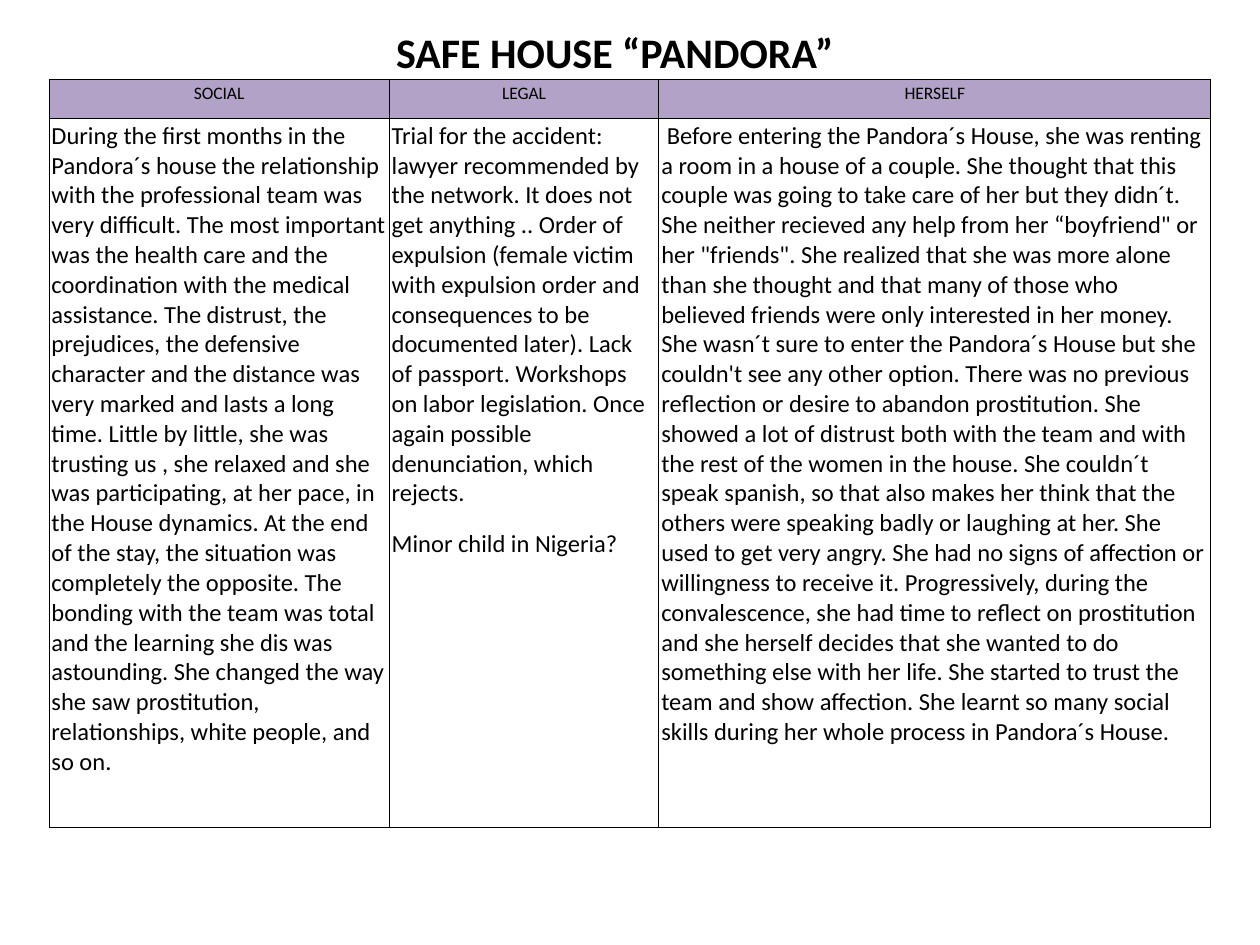
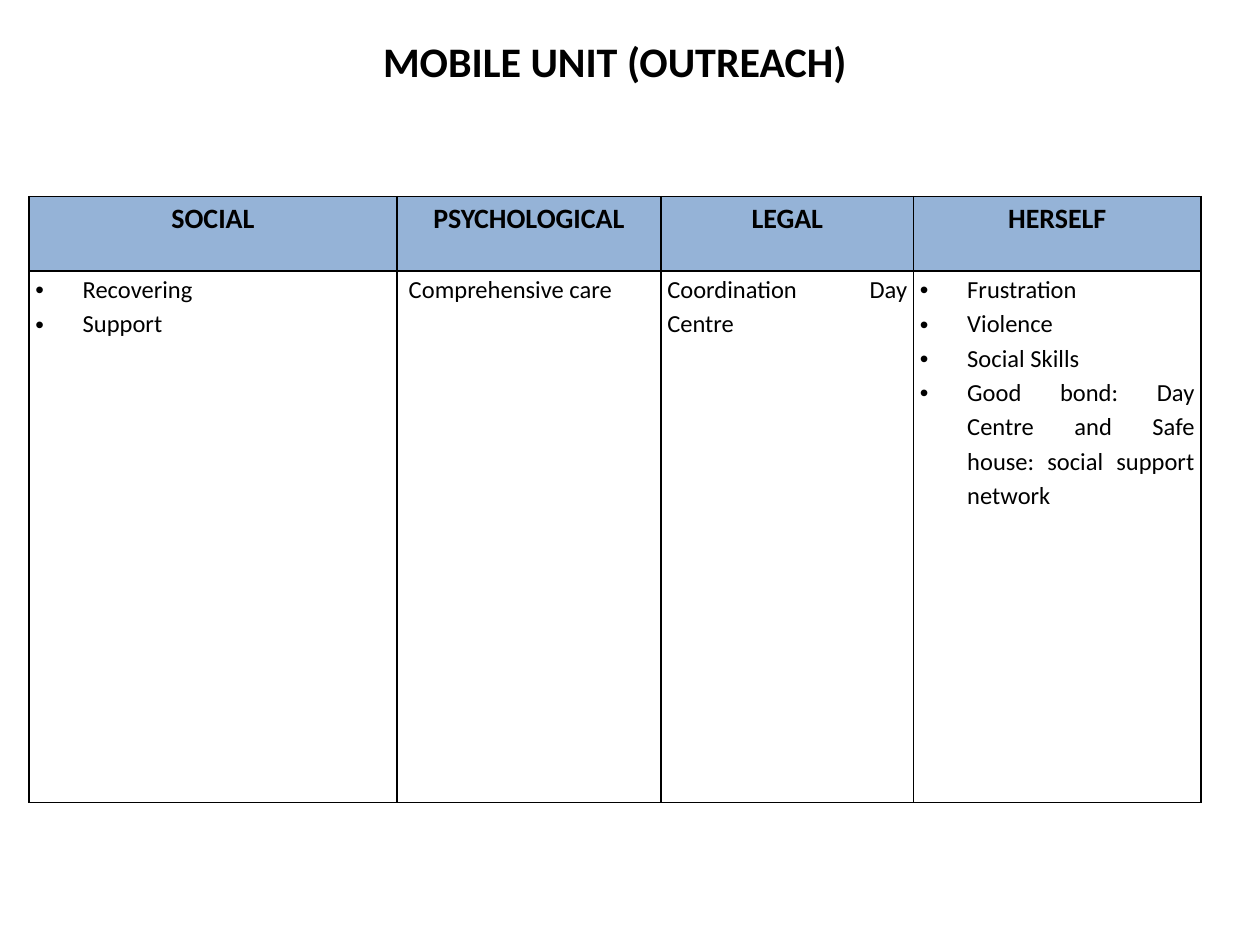
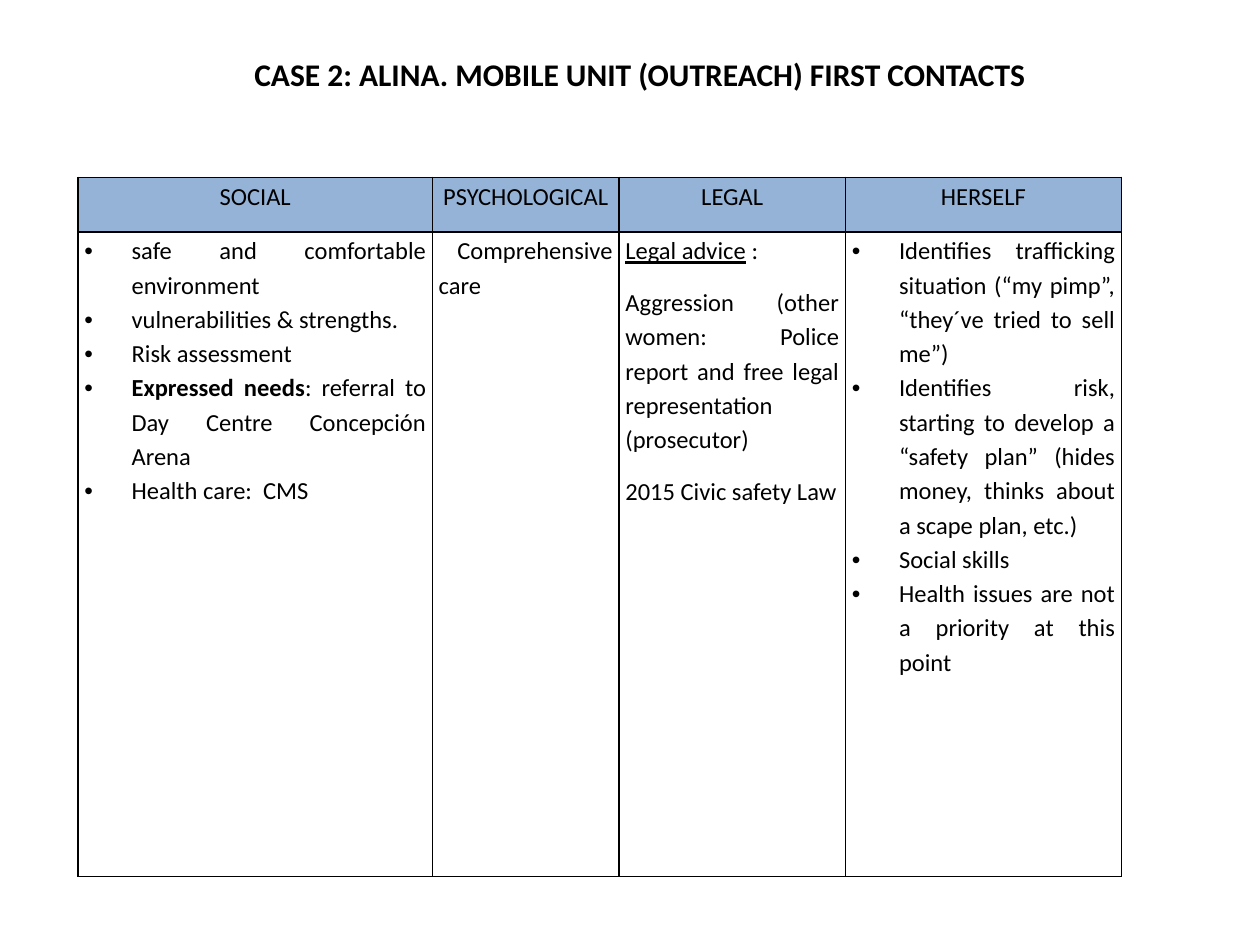
import pptx
import pptx.dml.color
import pptx.enum.text
import pptx.oxml.ns
import pptx.util
from lxml import etree

Pt = pptx.util.Pt
ALIGN = pptx.enum.text.PP_ALIGN

BLACK = pptx.dml.color.RGBColor(0x00, 0x00, 0x00)
PURPLE = pptx.dml.color.RGBColor(0xB3, 0xA2, 0xC7)
BLUE = pptx.dml.color.RGBColor(0x95, 0xB3, 0xD7)

FONT = "Calibri"
BULLET_INDENT = Pt(27)
HEADER_MARGINS = {"margin_left": Pt(3.6), "margin_right": Pt(3.6),
                  "margin_top": 0, "margin_bottom": 0}
TIGHT_MARGINS = {"margin_left": Pt(1.4), "margin_right": Pt(1.4),
                 "margin_top": Pt(1.4), "margin_bottom": Pt(1.4)}

CENTRED = {"alignment": ALIGN.CENTER}
HEADING = {"alignment": ALIGN.CENTER, "line_spacing": 1.15}
STORY = {"alignment": ALIGN.LEFT}
SPACED_STORY = {"alignment": ALIGN.LEFT, "space_after": Pt(12)}
JUSTIFIED = {"alignment": ALIGN.JUSTIFY, "line_spacing": 1.15}
SPACED = {**JUSTIFIED, "space_after": Pt(10)}
BULLETS = {**JUSTIFIED, "bulleted": True}

SOCIAL_STORY = (
    "During the first months in the Pandora´s house the relationship with the "
    "professional team was very difficult. The most important was the health care "
    "and the coordination with the medical assistance. The distrust, the prejudices, "
    "the defensive character and the distance was very marked and lasts a long time. "
    "Little by little, she was trusting us , she relaxed and she was participating, "
    "at her pace, in the House dynamics. At the end of the stay, the situation was "
    "completely the opposite. The bonding with the team was total and the learning "
    "she dis was astounding. She changed the way she saw prostitution, relationships, "
    "white people, and so on.")
LEGAL_STORY = (
    "Trial for the accident: lawyer recommended by the network. It does not get "
    "anything .. Order of expulsion (female victim with expulsion order and "
    "consequences to be documented later). Lack of passport. Workshops on labor "
    "legislation. Once again possible denunciation, which rejects.")
HERSELF_ARRIVAL = (
    " Before entering the Pandora´s House, she was renting a room in a house of a "
    "couple. She thought that this couple was going to take care of her but they "
    "didn´t. She neither recieved any help from her “boyfriend\" or her \"friends\". "
    "She realized that she was more alone than she thought and that many of those who "
    "believed friends were only interested in her money. She wasn´t sure to enter the "
    "Pandora´s House but she couldn't see any other option.")
HERSELF_STAY = (
    "There was no previous "
    "reflection or desire to abandon prostitution. She showed a lot of distrust both "
    "with the team and with the rest of the women in the house. She couldn´t speak "
    "spanish, so that also makes her think that the others were speaking badly or "
    "laughing at her. She used to get very angry. She had no signs of affection or "
    "willingness to receive it. Progressively, during the convalescence, she had time "
    "to reflect on prostitution and she herself decides that she wanted to do "
    "something else with her life. She started to trust the team and show affection. "
    "She learnt so many social skills during her whole process in Pandora´s House.")

# A column is (heading, width, paragraph style, paragraphs);
# a paragraph is a string or a list of (text, font format) spans.
PAGES = [
    {"title": "SAFE HOUSE “PANDORA”", "title_size": 24,
     "title_place": (56.2, 11.5, 590.4, 36),
     "corner": (28, 45.4), "row_heights": (22.3, 405.4),
     "header_fill": PURPLE, "header_font": {"size": Pt(10)},
     "border": 0.5, "body_margins": TIGHT_MARGINS,
     "columns": [
         ("SOCIAL", 194.4, STORY, [SOCIAL_STORY]),
         ("LEGAL", 154.1, SPACED_STORY, [LEGAL_STORY, "Minor child in Nigeria?"]),
         ("HERSELF", 315.4, STORY, [" ".join([HERSELF_ARRIVAL, HERSELF_STAY])])]},
    {"title": "MOBILE UNIT (OUTREACH)", "title_size": 24,
     "title_place": (28, 16.6, 646.6, 36),
     "corner": (16.6, 112.3), "row_heights": (42.5, 303.8),
     "header_fill": BLUE, "header_font": {"size": Pt(16), "bold": True},
     "border": 1, "body_margins": HEADER_MARGINS,
     "columns": [
         ("SOCIAL", 210.2, BULLETS, ["Recovering ", "Support"]),
         ("PSYCHOLOGICAL", 150.9, JUSTIFIED, [" Comprehensive care"]),
         ("LEGAL", 144.4, SPACED, ["Coordination Day Centre"]),
         ("HERSELF", 164.2, BULLETS, [
             "Frustration", "Violence", "Social Skills",
             "Good bond: Day Centre and Safe house: social support network"])]},
    {"title": "CASE 2: ALINA. MOBILE UNIT (OUTREACH) FIRST CONTACTS", "title_size": 18,
     "title_place": (33.8, 28.1, 663.8, 29),
     "corner": (44.6, 101.4), "row_heights": (31.2, 368.2),
     "header_fill": BLUE, "header_font": {"size": Pt(14)},
     "border": 1, "body_margins": HEADER_MARGINS,
     "columns": [
         ("SOCIAL", 202.5, BULLETS, [
             "safe and comfortable environment ", "vulnerabilities & strengths.",
             "Risk assessment ",
             [("Expressed needs", {"bold": True}),
              (": referral to Day Centre Concepción Arena", {})],
             "Health care:  CMS"]),
         ("PSYCHOLOGICAL", 106.7, JUSTIFIED, [" Comprehensive care"]),
         ("LEGAL", 129.4, SPACED, [
             [("Legal advice", {"underline": True}), (" : ", {})],
             "Aggression (other women: Police report and free legal representation "
             "(prosecutor)",
             "2015 Civic safety Law"]),
         ("HERSELF", 157.7, BULLETS, [
             "Identifies trafficking situation (“my pimp”, “they´ve tried to sell me”)",
             "Identifies risk, starting to develop a “safety plan” (hides money, thinks "
             "about a scape plan, etc.)",
             "Social skills",
             "Health issues are not a priority at this point"])]},
]


def apply_format(target, values):
    for name, value in values.items():
        setattr(target, name, value)


def add_child(parent, tag, **attributes):
    child = etree.SubElement(parent, pptx.oxml.ns.qn(tag))
    for name, value in attributes.items():
        child.set(name, str(value))
    return child


def add_bullet(para):
    properties = para._p.get_or_add_pPr()
    properties.set("marL", str(BULLET_INDENT))
    properties.set("indent", str(-BULLET_INDENT))
    add_child(properties, "a:buFont", typeface="Arial")
    add_child(properties, "a:buChar", char="•")


def write_text(frame, paragraphs, para_format, font_format):
    for index, content in enumerate(paragraphs):
        para = frame.add_paragraph() if index else frame.paragraphs[0]
        apply_format(para, {name: value for name, value in para_format.items()
                            if name != "bulleted"})
        if para_format.get("bulleted"):
            add_bullet(para)
        spans = [(content, {})] if isinstance(content, str) else content
        for text, extra in spans:
            span = para.add_run()
            span.text = text
            apply_format(span.font, {"name": FONT, "bold": False, **font_format, **extra})
            span.font.color.rgb = BLACK


def add_borders(cell, width):
    properties = cell._tc.get_or_add_tcPr()
    for side in ("a:lnL", "a:lnR", "a:lnT", "a:lnB"):
        line = add_child(properties, side, w=Pt(width))
        add_child(add_child(line, "a:solidFill"), "a:srgbClr", val=BLACK)


def add_title(page, text, size, place):
    frame = page.shapes.add_textbox(*map(Pt, place)).text_frame
    apply_format(frame, {"word_wrap": True,
                         "auto_size": pptx.enum.text.MSO_AUTO_SIZE.SHAPE_TO_FIT_TEXT})
    write_text(frame, [text], CENTRED, {"size": Pt(size), "bold": True})


def add_case_table(page, content):
    """Add one heading row and one body row, with a column for each area of the case."""
    columns, row_heights = content["columns"], content["row_heights"]
    width = sum(column[1] for column in columns)
    table = page.shapes.add_table(
        len(row_heights), len(columns), *map(Pt, content["corner"]),
        Pt(width), Pt(sum(row_heights))).table
    apply_format(table, {"first_row": False, "horz_banding": False})
    for row, height in zip(table.rows, row_heights):
        row.height = Pt(height)
    for index, (heading, column_width, body_format, paragraphs) in enumerate(columns):
        table.columns[index].width = Pt(column_width)
        header, body = table.cell(0, index), table.cell(1, index)
        for cell, margins in ((header, HEADER_MARGINS), (body, content["body_margins"])):
            apply_format(cell, margins)
            add_borders(cell, content["border"])
        header.fill.solid()
        header.fill.fore_color.rgb = content["header_fill"]
        body.fill.background()
        write_text(header.text_frame, [heading], HEADING, content["header_font"])
        write_text(body.text_frame, paragraphs, body_format, {"size": Pt(14)})


def main():
    deck = pptx.Presentation()
    apply_format(deck, {"slide_width": Pt(720), "slide_height": Pt(540)})
    for content in PAGES:
        page = deck.slides.add_slide(deck.slide_layouts[6])
        add_case_table(page, content)
        add_title(page, content["title"], content["title_size"], content["title_place"])
    deck.save("out.pptx")


if __name__ == "__main__":
    main()
